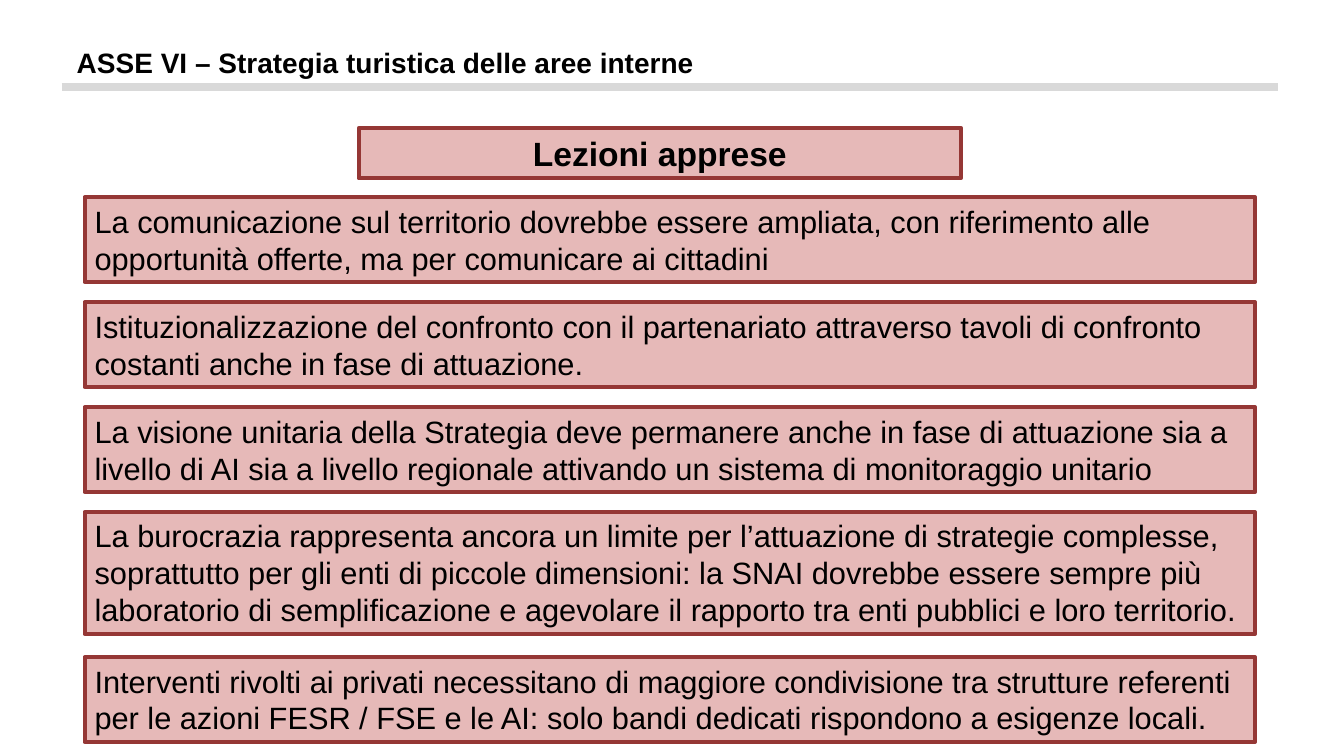
from dataclasses import dataclass

from lxml import etree
from pptx import Presentation
from pptx import util as u
from pptx.dml.color import RGBColor
from pptx.enum import shapes, text
from pptx.oxml import ns

COLOURS = {"ink": "000000", "box": "E6B9B8", "border": "953735", "rule": "D9D9D9"}
FRAME = {
    "auto_size": text.MSO_AUTO_SIZE.NONE,
    "vertical_anchor": text.MSO_ANCHOR.TOP,
    "margin_left": u.Pt(7.2),
    "margin_right": u.Pt(7.2),
    "margin_top": u.Pt(3.6),
    "margin_bottom": u.Pt(3.6),
}
LESSON_LEFT, LESSON_WIDTH, TWO_LINES, THREE_LINES = 60.5, 836, 60.5, 87


@dataclass(frozen=True)
class Box:
    words: str
    top: float
    height: float = TWO_LINES
    left: float = LESSON_LEFT
    width: float = LESSON_WIDTH
    size: float = 22
    bold: bool = False
    align: text.PP_ALIGN = text.PP_ALIGN.LEFT
    wrap: bool = True


TITLE = Box("ASSE VI – Strategia turistica delle aree interne", 28.8, 51, 46, 458.6,
            20, True, text.PP_ALIGN.CENTER, False)
BOXES = [
    Box("Lezioni apprese", 91.4, 36, 256.3, 430, 24, True, text.PP_ALIGN.CENTER),
    Box("La comunicazione sul territorio dovrebbe essere ampliata, con riferimento alle "
        "opportunità offerte, ma per comunicare ai cittadini", 141),
    Box("Istituzionalizzazione del confronto con il partenariato attraverso tavoli di "
        "confronto costanti anche in fase di attuazione.", 216),
    Box("La visione unitaria della Strategia deve permanere anche in fase di attuazione "
        "sia a livello di AI sia a livello regionale attivando un sistema di "
        "monitoraggio unitario", 291),
    Box("La burocrazia rappresenta ancora un limite per l’attuazione di strategie "
        "complesse, soprattutto per gli enti di piccole dimensioni: la SNAI dovrebbe "
        "essere sempre più laboratorio di semplificazione e agevolare il rapporto tra "
        "enti pubblici e loro territorio.", 365.8, THREE_LINES),
    Box("Interventi rivolti ai privati necessitano di maggiore condivisione tra strutture "
        "referenti per le azioni FESR / FSE e le AI: solo bandi dedicati rispondono a "
        "esigenze locali.", 469.5),
]


def colour(key: str) -> RGBColor:
    return RGBColor.from_string(COLOURS[key])


def write(shape, box: Box) -> None:
    frame = shape.text_frame
    frame.text = box.words
    for name, value in {**FRAME, "word_wrap": box.wrap}.items():
        setattr(frame, name, value)
    paragraph = frame.paragraphs[0]
    paragraph.alignment = box.align
    font = paragraph.runs[0].font
    for name, value in {"name": "Arial", "size": u.Pt(box.size), "bold": box.bold}.items():
        setattr(font, name, value)
    font.color.rgb = colour("ink")


def draw_title(slide, box: Box) -> None:
    title = slide.shapes.title
    for side in ("left", "top", "width", "height"):
        setattr(title, side, u.Pt(getattr(box, side)))
    write(title, box)


def draw_box(slide, box: Box) -> None:
    panel = slide.shapes.add_shape(
        shapes.MSO_SHAPE.RECTANGLE,
        u.Pt(box.left), u.Pt(box.top), u.Pt(box.width), u.Pt(box.height))
    panel.shadow.inherit = False
    panel.fill.solid()
    panel.fill.fore_color.rgb = colour("box")
    panel.line.color.rgb = colour("border")
    panel.line.width = u.Pt(3)
    write(panel, box)


def draw_rule(slide) -> None:
    rule = slide.shapes.add_connector(
        shapes.MSO_CONNECTOR.STRAIGHT, u.Pt(44), u.Pt(62), u.Pt(913), u.Pt(62))
    rule.line.color.rgb = colour("rule")
    rule.line.width = u.Pt(6)
    etree.SubElement(rule.element.spPr, ns.qn("a:effectLst"))


def main() -> None:
    deck = Presentation()
    deck.slide_width, deck.slide_height = u.Pt(960), u.Pt(540)
    slide = deck.slides.add_slide(deck.slide_layouts[5])
    draw_rule(slide)
    draw_title(slide, TITLE)
    for box in BOXES:
        draw_box(slide, box)
    deck.save("out.pptx")


if __name__ == "__main__":
    main()
